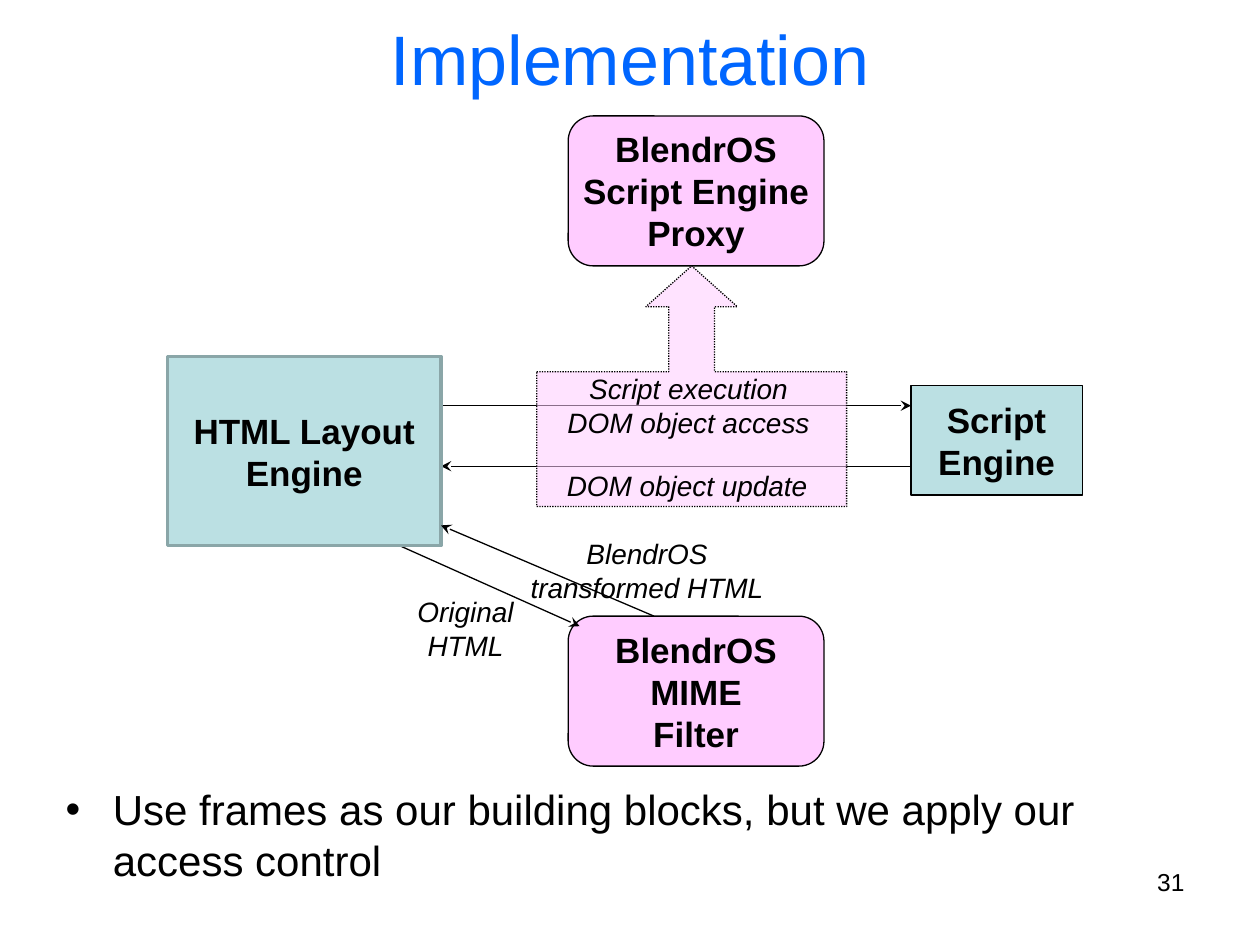
from lxml import etree
from pptx import Presentation
from pptx import util as u
from pptx.dml.color import RGBColor
from pptx.enum import dml, shapes, text
from pptx.oxml.ns import qn

BLACK = RGBColor(0x00, 0x00, 0x00)
TITLE_BLUE = RGBColor(0x00, 0x66, 0xFF)
TEAL = RGBColor(0xBB, 0xE0, 0xE3)
TEAL_EDGE = RGBColor(0x8A, 0xA6, 0xA8)
PINK = RGBColor(0xFF, 0xCC, 0xFF)

KIND = shapes.MSO_SHAPE
ALIGN = text.PP_ALIGN


class Diagram:
    """Places elements on a grid of 100 columns by 75 rows."""

    columns, rows = 100, 75
    font = {"name": "Arial", "size": 20}

    def __init__(self, deck):
        self.deck = deck
        self.page = deck.slides.add_slide(deck.slide_layouts[1])

    def grid(self, *lengths):
        """Turn alternating column and row counts into slide lengths."""
        units = (self.deck.slide_width / self.columns,
                 self.deck.slide_height / self.rows)
        return [u.Emu(round(n * units[i % 2])) for i, n in enumerate(lengths)]

    def set_words(self, shape, words, align, wrap=True, anchor=None, color=BLACK, **style):
        frame = shape.text_frame
        frame.text = words
        frame.word_wrap = wrap
        frame.auto_size = text.MSO_AUTO_SIZE.NONE
        if anchor is not None:
            frame.vertical_anchor = anchor
        values = {**self.font, **style}
        values["size"] = u.Pt(values["size"])
        for para in frame.paragraphs:
            para.alignment = align
            for span in para.runs:
                for name, value in values.items():
                    setattr(span.font, name, value)
                span.font.color.rgb = color

    def placeholder(self, index, area, words, align, **style):
        box = self.page.placeholders[index]
        for name, value in zip(("left", "top", "width", "height"), self.grid(*area)):
            setattr(box, name, value)
        self.set_words(box, words, align, **style)

    def label(self, area, words, align=ALIGN.CENTER, wrap=False, **style):
        box = self.page.shapes.add_textbox(*self.grid(*area))
        self.set_words(box, words, align, wrap, **style)

    def block(self, kind, area, fill, words="", wrap=False, edge=BLACK, weight=0.75):
        box = self.page.shapes.add_shape(kind, *self.grid(*area))
        box.shadow.inherit = False
        box.fill.solid()
        box.fill.fore_color.rgb = fill
        box.line.color.rgb = edge
        box.line.width = u.Pt(weight)
        if words:
            self.set_words(box, words, ALIGN.CENTER, wrap, text.MSO_ANCHOR.MIDDLE, bold=True)
        return box

    def callout(self, area, adjustments, opacity):
        box = self.block(KIND.UP_ARROW_CALLOUT, area, PINK)
        box.line.dash_style = dml.MSO_LINE.ROUND_DOT
        for i, value in enumerate(adjustments):
            box.adjustments[i] = value
        color = box.element.spPr.find(qn("a:solidFill"))[0]
        etree.SubElement(color, qn("a:alpha")).set("val", str(opacity * 1000))

    def arrow(self, start, end):
        line = self.page.shapes.add_connector(
            shapes.MSO_CONNECTOR.STRAIGHT, *self.grid(*start, *end))
        line.line.color.rgb = BLACK
        line.line.width = u.Pt(0.75)
        properties = line.element.spPr
        etree.SubElement(properties.find(qn("a:ln")), qn("a:tailEnd")).set("type", "stealth")
        etree.SubElement(properties, qn("a:effectLst"))


def main():
    deck = Presentation()
    deck.slide_width, deck.slide_height = u.Inches(10), u.Inches(7.5)
    diagram = Diagram(deck)

    diagram.placeholder(0, (5, -1.7, 90, 12.5), "Implementation", ALIGN.CENTER,
                        anchor=text.MSO_ANCHOR.MIDDLE, size=40, color=TITLE_BLUE)
    diagram.placeholder(
        1, (4.2, 61.7, 89.2, 5.3),
        "Use frames as our building blocks, but we apply our access control",
        ALIGN.LEFT, size=24)
    diagram.label((71.7, 68.3, 23.3, 5.2), "31", ALIGN.RIGHT, wrap=True, size=14)

    diagram.block(KIND.RECTANGLE, (72.3, 30.6, 13.6, 8.7), TEAL, "Script\nEngine")
    diagram.arrow((35, 32.2), (72.3, 32.2))
    diagram.arrow((72.3, 37), (35, 37))

    for top, words in ((9.2, "BlendrOS\nScript Engine\nProxy"),
                       (48.9, "BlendrOS\nMIME\nFilter")):
        diagram.block(KIND.ROUNDED_RECTANGLE, (45.1, top, 20.3, 11.9), PINK, words)
    diagram.callout((42.6, 21.1, 24.6, 19.1), (0.19, 0.19, 0.17, 0.56), opacity=54)

    note = {"size": 16, "italic": True}
    diagram.label((43.8, 29, 21.7, 6.1), "Script execution\nDOM object access", **note)
    diagram.label((44, 36.7, 21.5, 3.5), "DOM object update", ALIGN.LEFT, wrap=True, **note)
    diagram.arrow((31.7, 43.3), (46, 49.7))
    diagram.label((31.7, 46.7, 10.5, 6.1), "Original\nHTML", **note)
    diagram.label((40.9, 42.1, 20.9, 6.1), "BlendrOS\ntransformed HTML", **note)

    diagram.block(KIND.RECTANGLE, (13.3, 28.3, 21.7, 15), TEAL, "HTML Layout Engine",
                  wrap=True, edge=TEAL_EDGE, weight=2)
    diagram.arrow((51.9, 48.9), (35, 41.7))

    deck.save("out.pptx")


if __name__ == "__main__":
    main()
